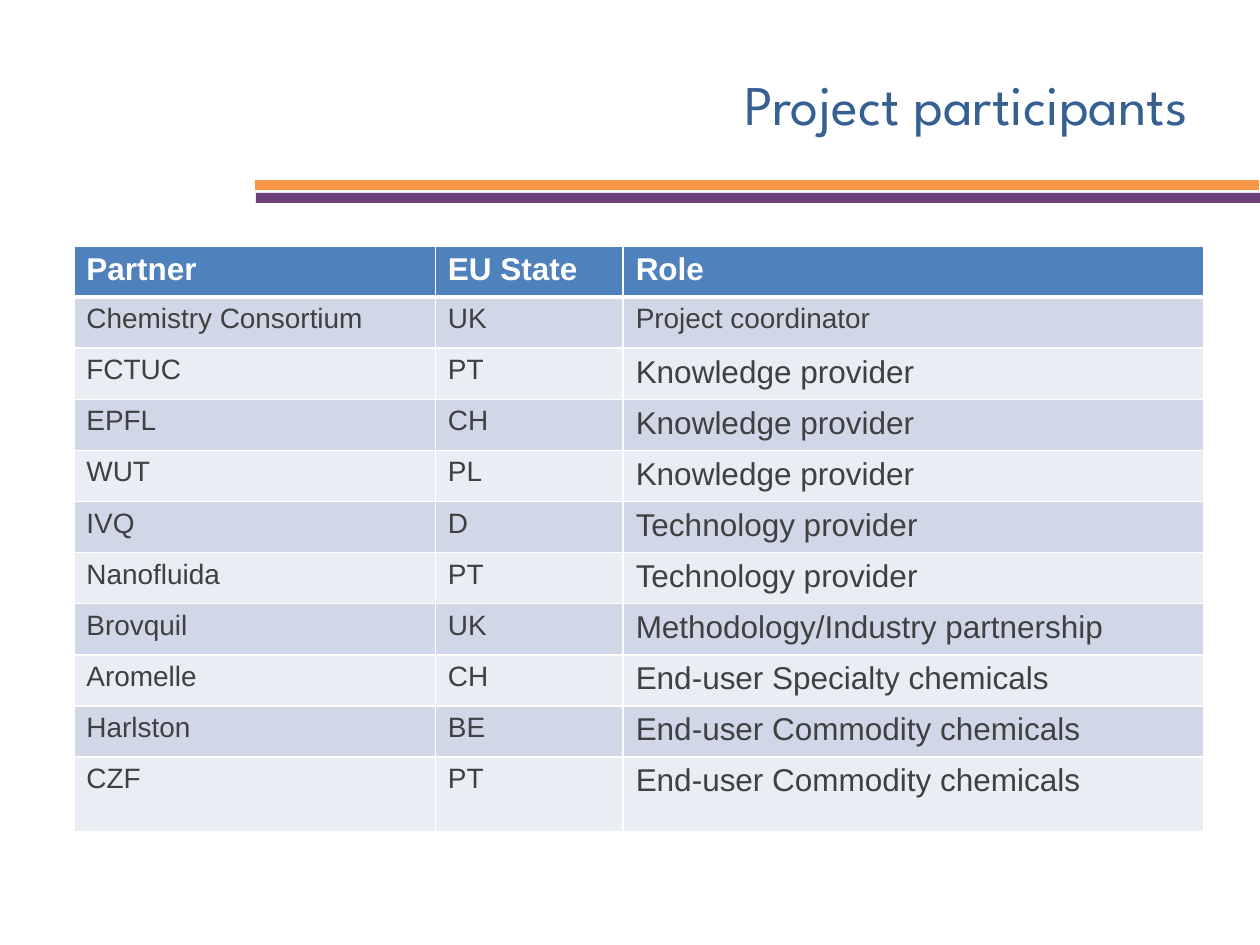
from dataclasses import dataclass

from lxml import etree
from pptx import Presentation
from pptx.dml.color import RGBColor
from pptx.enum.shapes import MSO_CONNECTOR
from pptx.enum.text import MSO_ANCHOR, PP_ALIGN
from pptx.oxml.ns import qn
from pptx.util import Pt

STRAIGHT = MSO_CONNECTOR.STRAIGHT
MIDDLE = MSO_ANCHOR.MIDDLE
RIGHT = PP_ALIGN.RIGHT
TITLE_ONLY = 5


@dataclass(frozen=True)
class Theme:
    title_font: str = "League Spartan"
    table_font: str = "Arial"
    title: str = "376092"
    orange: str = "F79646"
    purple: str = "552163"
    header: str = "4F81BD"
    bands: tuple = ("D0D8E8", "E9EDF4")
    white: str = "FFFFFF"
    text: str = "404040"
    title_size: int = 32
    large_size: int = 18
    small_size: int = 16


THEME = Theme()

HEADINGS = ("Partner", "EU State", "Role")
PARTICIPANTS = (
    ("Chemistry Consortium", "UK", "Project coordinator"),
    ("FCTUC", "PT", "Knowledge provider"),
    ("EPFL", "CH", "Knowledge provider"),
    ("WUT", "PL", "Knowledge provider"),
    ("IVQ", "D", "Technology provider"),
    ("Nanofluida", "PT", "Technology provider"),
    ("Brovquil", "UK", "Methodology/Industry partnership"),
    ("Aromelle", "CH", "End-user Specialty chemicals"),
    ("Harlston", "BE", "End-user Commodity chemicals"),
    ("CZF", "PT", "End-user Commodity chemicals"),
)
COLUMN_WIDTHS = (206.6, 107.3, 331.9)
ROW_HEIGHT = 29.2
LAST_ROW_HEIGHT = 42.8


def style_font(font, name, size, color, bold=False):
    font.name = name
    font.size = Pt(size)
    font.bold = bold
    font.color.rgb = RGBColor.from_string(color)


def add_rule(slide, left, right, y, color, opacity=100):
    rule = slide.shapes.add_connector(STRAIGHT, Pt(left), Pt(y), Pt(right), Pt(y))
    rule.line.width = Pt(5.75)
    rule.line.color.rgb = RGBColor.from_string(color)
    properties = rule._element.spPr
    etree.SubElement(properties, qn("a:effectLst"))
    if opacity < 100:
        rgb = properties.find(".//" + qn("a:srgbClr"))
        etree.SubElement(rgb, qn("a:alpha"), val=str(opacity * 1000))


def set_title(slide, text):
    title = slide.shapes.title
    title.left, title.top, title.width, title.height = map(Pt, (157.7, 25.2, 528.5, 67.7))
    frame = title.text_frame
    frame.text = text
    frame.vertical_anchor = MIDDLE
    paragraph = frame.paragraphs[0]
    paragraph.alignment = RIGHT
    style_font(paragraph.runs[0].font, THEME.title_font, THEME.title_size, THEME.title)


def set_borders(cell, **widths):
    """Draw white cell borders; widths are in points, keyed L, R, T, B."""
    properties = cell._tc.get_or_add_tcPr()
    for position, (side, width) in enumerate(widths.items()):
        border = etree.Element(qn(f"a:ln{side}"), w=str(Pt(width)))
        fill = etree.SubElement(border, qn("a:solidFill"))
        etree.SubElement(fill, qn("a:srgbClr"), val=THEME.white)
        properties.insert(position, border)


def fill_cell(cell, text, size, color, background, bold=False):
    cell.text = text
    style_font(cell.text_frame.paragraphs[0].runs[0].font,
               THEME.table_font, size, color, bold)
    cell.fill.solid()
    cell.fill.fore_color.rgb = RGBColor.from_string(background)


def add_participants_table(slide):
    row_heights = [ROW_HEIGHT] * len(PARTICIPANTS) + [LAST_ROW_HEIGHT]
    table = slide.shapes.add_table(
        len(row_heights), len(HEADINGS), Pt(42.2), Pt(140.6),
        Pt(sum(COLUMN_WIDTHS)), Pt(sum(row_heights))).table
    for column, width in zip(table.columns, COLUMN_WIDTHS):
        column.width = Pt(width)
    for row, height in zip(table.rows, row_heights):
        row.height = Pt(height)

    for column, heading in enumerate(HEADINGS):
        cell = table.cell(0, column)
        fill_cell(cell, heading, THEME.large_size, THEME.white, THEME.header, bold=True)
        set_borders(cell, L=1, R=1, T=1, B=3)

    role_column = len(HEADINGS) - 1
    for row, participant in enumerate(PARTICIPANTS, start=1):
        for column, text in enumerate(participant):
            cell = table.cell(row, column)
            is_large = column == role_column and row > 1
            size = THEME.large_size if is_large else THEME.small_size
            fill_cell(cell, text, size, THEME.text, THEME.bands[(row - 1) % 2])
            set_borders(cell, L=1, R=1, T=3 if row == 1 else 1, B=1)


def main():
    presentation = Presentation()
    presentation.slide_width, presentation.slide_height = Pt(720), Pt(540)
    slide = presentation.slides.add_slide(presentation.slide_layouts[TITLE_ONLY])
    add_rule(slide, 146.2, 720, 113.1, THEME.purple, opacity=85)
    add_rule(slide, 145.6, 719.4, 105.8, THEME.orange)
    set_title(slide, "Project participants")
    add_participants_table(slide)
    presentation.save("out.pptx")


if __name__ == "__main__":
    main()
